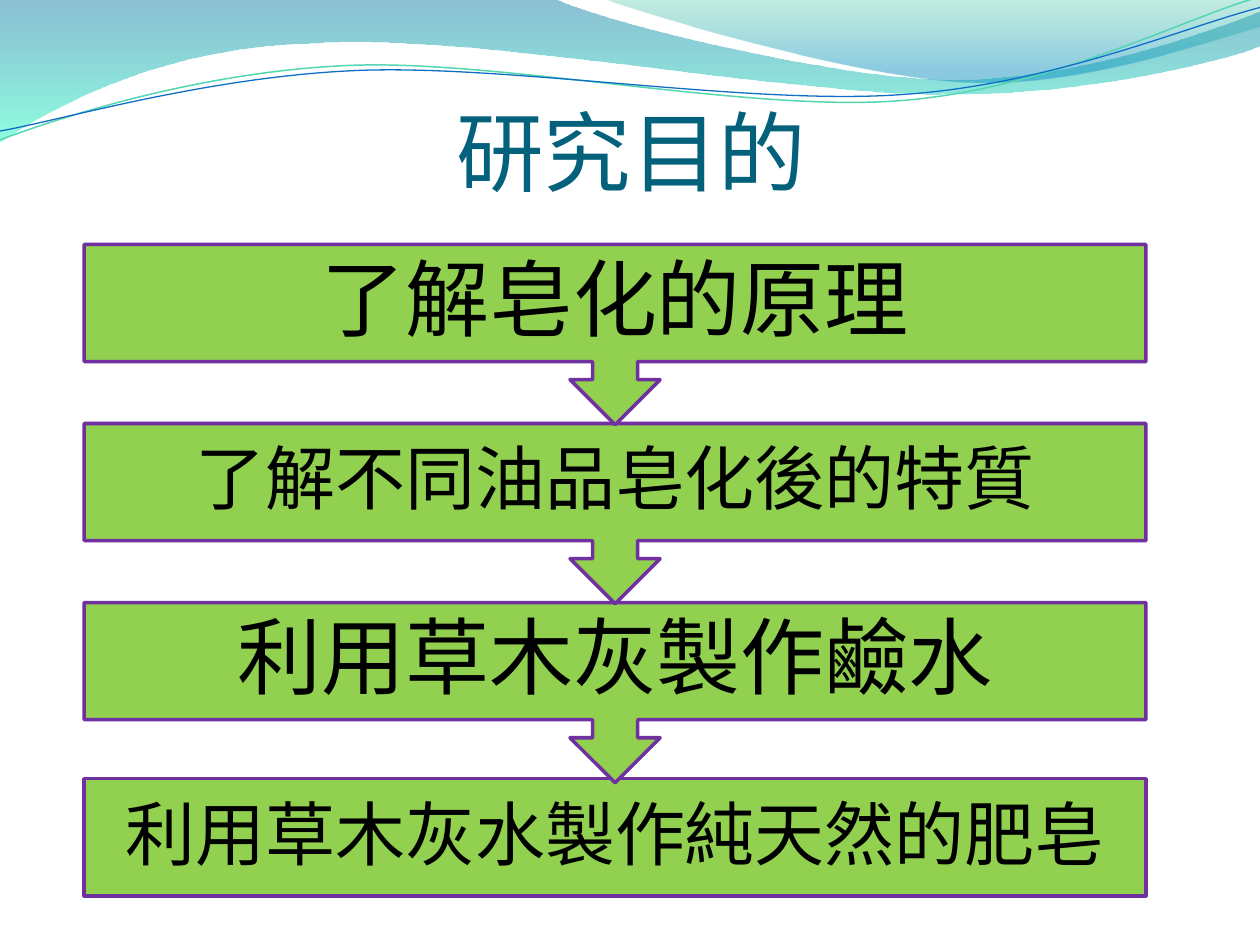
from dataclasses import dataclass
from math import cos, radians, sin

from lxml import etree
from pptx import Presentation
from pptx.dml.color import RGBColor
from pptx.enum import shapes, text
from pptx.oxml import ns
from pptx.util import Pt


@dataclass(frozen=True)
class Theme:
    font: str = "Noto Sans CJK SC"
    title: str = "04617B"
    ink: str = "000000"
    step_fill: str = "92D050"
    step_line: str = "7030A0"
    title_size: float = 50
    large: float = 48
    small: float = 40


@dataclass(frozen=True)
class Stop:
    position: float
    color: str
    opacity: int  # percent


@dataclass(frozen=True)
class Curve:
    """Start point, then segments: (x, y) is a line, six numbers a Bézier curve."""
    start: tuple[float, float]
    segments: tuple[tuple[float, ...], ...]


@dataclass(frozen=True)
class Wave:
    curve: Curve
    stops: tuple[Stop, Stop]


@dataclass(frozen=True)
class Strand:
    curve: Curve
    center: tuple[float, float]
    color: str
    width: float


@dataclass(frozen=True)
class Step:
    words: str
    size: float
    top: float
    leads_on: bool = True


@dataclass(frozen=True)
class Frame:
    left: float
    top: float
    width: float
    height: float

    def lengths(self) -> tuple[Pt, ...]:
        return Pt(self.left), Pt(self.top), Pt(self.width), Pt(self.height)


THEME = Theme()
GRAIN = 100  # freeform units in a point
TILT = 357.3
STEP_LEFT, STEP_WIDTH, STEP_HEIGHT, CALLOUT_HEIGHT = 48.1, 606.7, 67, 103
STEP_TOP, STEP_PITCH, LAST_TOP = 139.7, 102.3, 445

WAVES = (
    Wave(Curve((0, 0), (
        (316.8, -0.7),
        (342.7, 12.2, 478.1, 45.4, 545.8, 45.4),
        (614.2, 45.4, 689.8, 18.7, 720, 6.5),
        (720.7, 25.9),
        (709.2, 31.7, 626.4, 54.7, 537.1, 54),
        (447.8, 54, 275, 20.2, 185, 24.5),
        (92.9, 25.9, 33.1, 59.8, -0.7, 81.4),
        (0, 0))),
        (Stop(0, "0074A1", 45), Stop(1, "33FFC7", 55))),
    Wave(Curve((344.9, -0.7), (
        (366.5, 7.9, 491, 44.6, 553.7, 46.8),
        (616.3, 49.7, 691.9, 23, 720, 15.1),
        (720, 0),
        (344.9, -0.7))),
        (Stop(0, "36C39D", 30), Stop(0.8, "008BBF", 45))),
)
STRANDS = (
    Strand(Curve((0, 79.9), (
        (34.6, 67, 113.8, 41, 199.4, 37.4),
        (284.4, 33.8, 427, 64.1, 513.4, 57.6),
        (599.8, 51.1, 675.4, 10.8, 718.6, -1.4))),
        (359.3, 41.4), "54D6B2", 0.85),
    Strand(Curve((0, 74.9), (
        (33.8, 69.1, 118.1, 43.9, 203.8, 40.3),
        (290.2, 36.7, 429.8, 60.5, 516.2, 54),
        (601.9, 48.2, 677.5, 15.1, 720, 4.3))),
        (359.6, 42.5), "0F6FC6", 0.75),
)
STEPS = (
    Step("了解皂化的原理", THEME.large, STEP_TOP),
    Step("了解不同油品皂化後的特質", THEME.small, STEP_TOP + STEP_PITCH),
    Step("利用草木灰製作鹼水", THEME.large, STEP_TOP + 2 * STEP_PITCH),
    Step("利用草木灰水製作純天然的肥皂", THEME.small, LAST_TOP, leads_on=False),
)


def rgb(color: str) -> RGBColor:
    return RGBColor.from_string(color)


def turn(point: tuple[float, ...], center: tuple[float, float],
         degrees: float) -> tuple[float, float]:
    angle = radians(degrees)
    x, y = point[0] - center[0], point[1] - center[1]
    return (center[0] + x * cos(angle) - y * sin(angle),
            center[1] + x * sin(angle) + y * cos(angle))


def add_outline(page, curve: Curve, close: bool,
                center: tuple[float, float] = (0, 0), tilt: float = 0):
    """Build the control polygon, then join each three controls into a curve."""
    points = [curve.start] + [segment[i:i + 2] for segment in curve.segments
                              for i in range(0, len(segment), 2)]
    units = [(x * GRAIN, y * GRAIN)
             for x, y in (turn(point, center, -tilt) for point in points)]
    builder = page.shapes.build_freeform(*units[0], scale=Pt(1) / GRAIN)
    builder.add_line_segments(units[1:], close=close)
    shape = builder.convert_to_shape()
    shape.shadow.inherit = False
    shape.rotation = tilt

    sides = iter(list(shape._element.iter(ns.qn("a:lnTo"))))
    for segment in curve.segments:
        first = next(sides)
        if len(segment) == 2:
            continue
        bend = etree.Element(ns.qn("a:cubicBezTo"))
        first.addprevious(bend)
        for side in (first, next(sides), next(sides)):
            bend.append(side[0])
            side.getparent().remove(side)
    return shape


def add_wave(page, wave: Wave) -> None:
    shape = add_outline(page, wave.curve, close=True)
    shape.line.fill.background()
    shape.fill.gradient()
    shape.fill.gradient_angle = 270
    for stop, part in zip(wave.stops, shape.fill.gradient_stops):
        part.position = stop.position
        part.color.rgb = rgb(stop.color)
    for stop, color in zip(wave.stops, shape._element.iter(ns.qn("a:srgbClr"))):
        etree.SubElement(color, ns.qn("a:alpha"), val=str(stop.opacity * 1000))


def add_strand(page, strand: Strand) -> None:
    shape = add_outline(page, strand.curve, False, strand.center, TILT)
    shape.fill.background()
    shape.line.color.rgb = rgb(strand.color)
    shape.line.width = Pt(strand.width)


def add_label(page, frame: Frame, words: str, size: float, color: str,
              anchor: text.MSO_ANCHOR, inset: float, spacing: float) -> None:
    box = page.shapes.add_textbox(*frame.lengths())
    body = box.text_frame
    body.word_wrap = True
    body.vertical_anchor = anchor
    body.margin_left = body.margin_right = Pt(inset)
    body.margin_top = body.margin_bottom = Pt(inset)
    para = body.paragraphs[0]
    para.text = words
    para.alignment = text.PP_ALIGN.CENTER
    para.line_spacing = spacing
    para.font.name = THEME.font
    para.font.size = Pt(size)
    para.font.color.rgb = rgb(color)
    east_asian = etree.Element(ns.qn("a:ea"), typeface=THEME.font)
    para.font._element.find(ns.qn("a:latin")).addnext(east_asian)


def add_step(page, step: Step) -> None:
    kinds = shapes.MSO_SHAPE
    kind = kinds.UP_ARROW_CALLOUT if step.leads_on else kinds.RECTANGLE
    height = CALLOUT_HEIGHT if step.leads_on else STEP_HEIGHT
    frame = Frame(STEP_LEFT, step.top, STEP_WIDTH, height)
    shape = page.shapes.add_shape(kind, *frame.lengths())
    shape.rotation = 180 if step.leads_on else 0
    shape.shadow.inherit = False
    shape.fill.solid()
    shape.fill.fore_color.rgb = rgb(THEME.step_fill)
    shape.line.color.rgb = rgb(THEME.step_line)
    shape.line.width = Pt(2)
    add_label(page, Frame(STEP_LEFT, step.top, STEP_WIDTH, STEP_HEIGHT), step.words,
              step.size, THEME.ink, text.MSO_ANCHOR.MIDDLE, step.size * 0.56, 0.9)


def main() -> None:
    deck = Presentation()
    deck.slide_width, deck.slide_height = Pt(720), Pt(540)
    page = deck.slides.add_slide(deck.slide_layouts[6])

    # Wave decoration
    for wave in WAVES:
        add_wave(page, wave)
    for strand in STRANDS:
        add_strand(page, strand)

    # Title
    add_label(page, Frame(36.7, 25.9, 648, 90), "研究目的", THEME.title_size,
              THEME.title, text.MSO_ANCHOR.BOTTOM, 0, 1)

    # Steps, last first so that each arrow lies over the next box
    for step in reversed(STEPS):
        add_step(page, step)

    deck.save("out.pptx")


if __name__ == "__main__":
    main()
